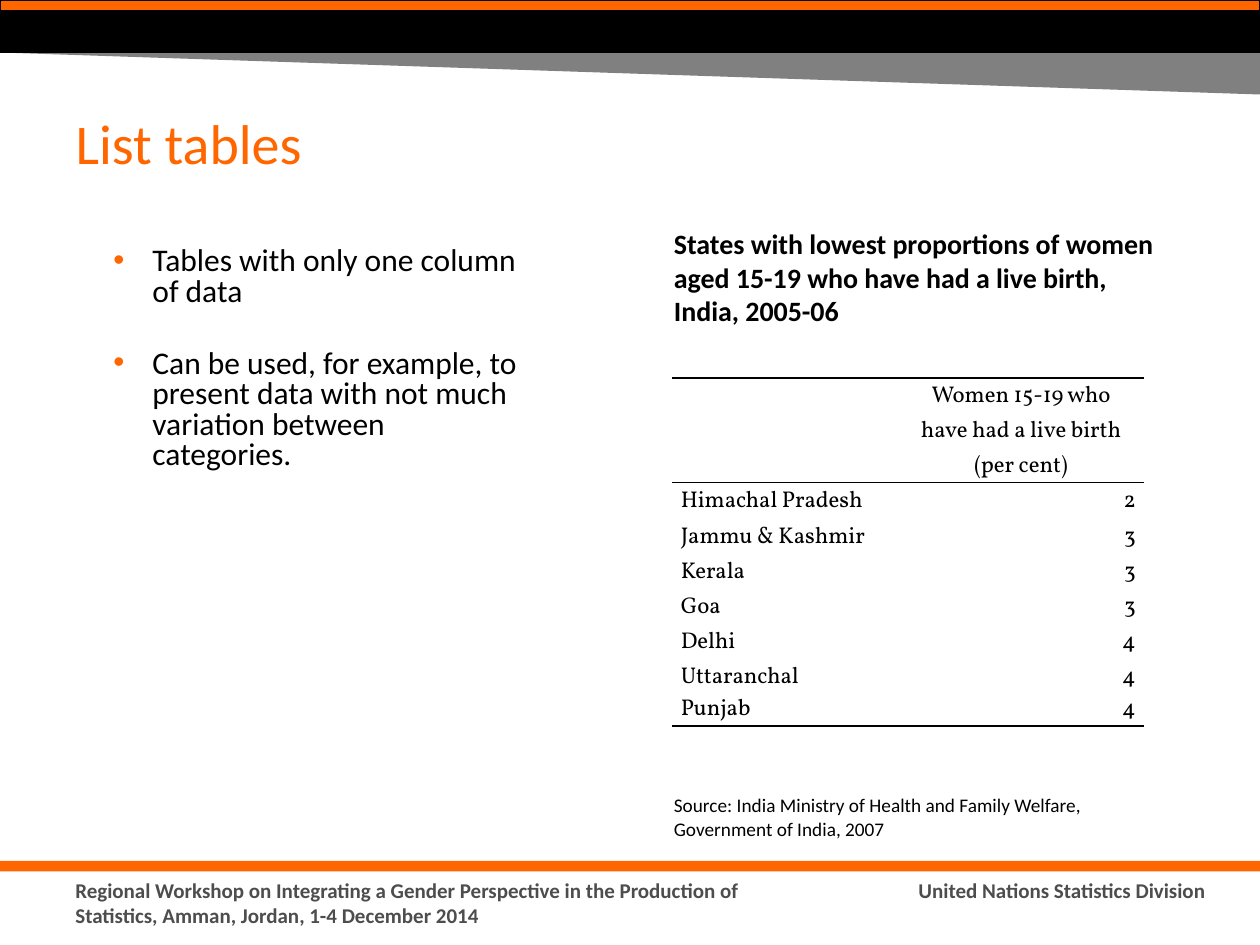
from lxml import etree
from pptx import Presentation
from pptx.dml.color import RGBColor
from pptx.enum.shapes import MSO_SHAPE
from pptx.enum.text import MSO_ANCHOR, MSO_AUTO_SIZE, PP_ALIGN
from pptx.oxml.ns import qn
from pptx.util import Inches, Pt

LEFT, CENTER, RIGHT = PP_ALIGN.LEFT, PP_ALIGN.CENTER, PP_ALIGN.RIGHT
TOP, MIDDLE, BOTTOM = MSO_ANCHOR.TOP, MSO_ANCHOR.MIDDLE, MSO_ANCHOR.BOTTOM
NO_AUTOFIT = MSO_AUTO_SIZE.NONE
RECTANGLE, TRIANGLE = MSO_SHAPE.RECTANGLE, MSO_SHAPE.RIGHT_TRIANGLE

COLORS = {"accent": "FF6600", "ink": "000000", "wedge": "808080", "footer": "4D4D4D"}
SANS, SERIF = "Calibri", "Vollkorn"

# The slide is a grid of 120 columns by 90 rows
UNIT = Inches(10) // 120
COLUMNS, ROWS = 120, 90

BULLETS = [
    "Tables with only one column of data",
    "Can be used, for example, to present data with not much variation between categories.",
]
HEADER = ["Women 15-19 who have had a live birth", "(per cent)"]
STATES = [
    ("Himachal Pradesh", 2),
    ("Jammu & Kashmir", 3),
    ("Kerala", 3),
    ("Goa", 3),
    ("Delhi", 4),
    ("Uttaranchal", 4),
    ("Punjab", 4),
]


def emu(box):
    """Turn a box of grid units (left, top, width, height) into lengths."""
    return [round(value * UNIT) for value in box]


def color(name):
    return RGBColor.from_string(COLORS[name])


def write(paragraph, text, size, font=SANS, ink="ink", bold=False, align=LEFT):
    paragraph.alignment = align
    run = paragraph.add_run()
    run.text = text
    run.font.name = font
    run.font.size = Pt(size)
    run.font.bold = bold
    run.font.color.rgb = color(ink)


def add_block(slide, box, kind, fill, line_width=None):
    block = slide.shapes.add_shape(kind, *emu(box))
    block.shadow.inherit = False
    block.fill.solid()
    block.fill.fore_color.rgb = color(fill)
    if line_width:
        block.line.color.rgb = color("ink")
        block.line.width = Pt(line_width)
    else:
        block.line.fill.background()
    return block


def add_label(slide, box, text, size, **style):
    frame = slide.shapes.add_textbox(*emu(box)).text_frame
    frame.word_wrap = True
    write(frame.paragraphs[0], text, size, **style)


def place(placeholder, box, anchor):
    placeholder.left, placeholder.top, placeholder.width, placeholder.height = emu(box)
    frame = placeholder.text_frame
    frame.auto_size = NO_AUTOFIT
    frame.word_wrap = True
    frame.vertical_anchor = anchor
    return frame


def add_masthead(slide, box):
    left, top, width, height = box
    band = height * 5 / 9
    wedge = add_block(slide, (left, top + band, width, height - band), TRIANGLE, "wedge")
    wedge.rotation = 180
    add_block(slide, (left, top, width, band), RECTANGLE, "ink", 0.75)
    add_block(slide, (left, top, width, band / 5), RECTANGLE, "accent", 0.5)


def add_footer(slide, box):
    left, top, width, height = box
    add_block(slide, (left, top, width, 1), RECTANGLE, "accent")
    style = {"size": 12, "ink": "footer", "bold": True}
    add_label(slide, (left + 6, top + 1, width * 0.6, height - 1),
              "Regional Workshop on Integrating a Gender Perspective in the "
              "Production of Statistics, Amman, Jordan, 1-4 December 2014", **style)
    add_label(slide, (left + width * 2 / 3, top + 1, width * 0.3, 3.2),
              "United Nations Statistics Division", align=RIGHT, **style)


def fill_title(slide, box):
    frame = place(slide.shapes.title, box, MIDDLE)
    write(frame.paragraphs[0], "List tables", 32, ink="accent")


def add_bullet(paragraph):
    properties = paragraph._p.get_or_add_pPr()
    properties.set("marL", str(Inches(0.61)))
    properties.set("indent", str(Inches(-0.31)))
    bullet_color = etree.SubElement(properties, qn("a:buClr"))
    etree.SubElement(bullet_color, qn("a:srgbClr"), val=COLORS["accent"])
    etree.SubElement(properties, qn("a:buFont"), typeface="Arial")
    etree.SubElement(properties, qn("a:buChar"), char="•")


def fill_bullets(slide, box):
    frame = place(slide.placeholders[1], box, TOP)
    for index, text in enumerate(BULLETS):
        paragraph = frame.add_paragraph() if index else frame.paragraphs[0]
        add_bullet(paragraph)
        paragraph.line_spacing = 0.8
        paragraph.space_before = Pt(24 if index else 0)
        write(paragraph, text, 18)


def set_borders(cell, top, bottom):
    """Rule a cell above and below; a width of 0 leaves that edge open."""
    properties = cell._tc.get_or_add_tcPr()
    for edge, width in (("L", 0), ("R", 0), ("T", top), ("B", bottom)):
        line = etree.SubElement(properties, qn(f"a:ln{edge}"), w=str(Pt(width)))
        if width:
            fill = etree.SubElement(line, qn("a:solidFill"))
            etree.SubElement(fill, qn("a:srgbClr"), val=COLORS["ink"])
        else:
            etree.SubElement(line, qn("a:noFill"))


def fill_cell(cell, lines, align, top, bottom):
    set_borders(cell, top, bottom)
    cell.fill.background()
    cell.vertical_anchor = BOTTOM
    cell.margin_left = cell.margin_right = Inches(0.07)
    cell.margin_top = cell.margin_bottom = 0
    frame = cell.text_frame
    for index, text in enumerate(lines):
        paragraph = frame.add_paragraph() if index else frame.paragraphs[0]
        paragraph.line_spacing = 1.1
        write(paragraph, text, 13, font=SERIF, align=align)


def add_state_table(slide, box):
    records = [([], HEADER)] + [([state], [str(share)]) for state, share in STATES]
    table = slide.shapes.add_table(len(records), 2, *emu(box)).table
    table.first_row = table.horz_banding = False
    for column, width in zip(table.columns, (1.79, 1.96)):
        column.width = Inches(width)
    rules = [1.5, 1] + [0] * (len(STATES) - 1) + [1.5]
    for index, (label, value) in enumerate(records):
        height = 0.83 if index == 0 else 0.25 if label == ["Uttaranchal"] else 0.28
        table.rows[index].height = Inches(height)
        edges = rules[index], rules[index + 1]
        fill_cell(table.cell(index, 0), label, LEFT, *edges)
        fill_cell(table.cell(index, 1), value, RIGHT if index else CENTER, *edges)


def add_table_panel(slide, box):
    left, top, width, height = box
    add_label(slide, (left, top, width, 11),
              "States with lowest proportions of women aged 15-19 who have had "
              "a live birth, India, 2005-06", 16, bold=True)
    add_state_table(slide, (left + 1, top + 15, 45, 33))
    add_label(slide, (left, top + height - 6, 48, 6),
              "Source: India Ministry of Health and Family Welfare, "
              "Government of India, 2007", 11)


def main():
    deck = Presentation()
    deck.slide_width, deck.slide_height = COLUMNS * UNIT, ROWS * UNIT
    slide = deck.slides.add_slide(deck.slide_layouts[1])
    add_masthead(slide, (0, 0, COLUMNS, 9))
    add_footer(slide, (0, 82, COLUMNS, 8))
    fill_title(slide, (6, 10, 50, 7))
    fill_bullets(slide, (6, 23, 45, 53))
    add_table_panel(slide, (63, 21, 50, 60))
    deck.save("out.pptx")


if __name__ == "__main__":
    main()
